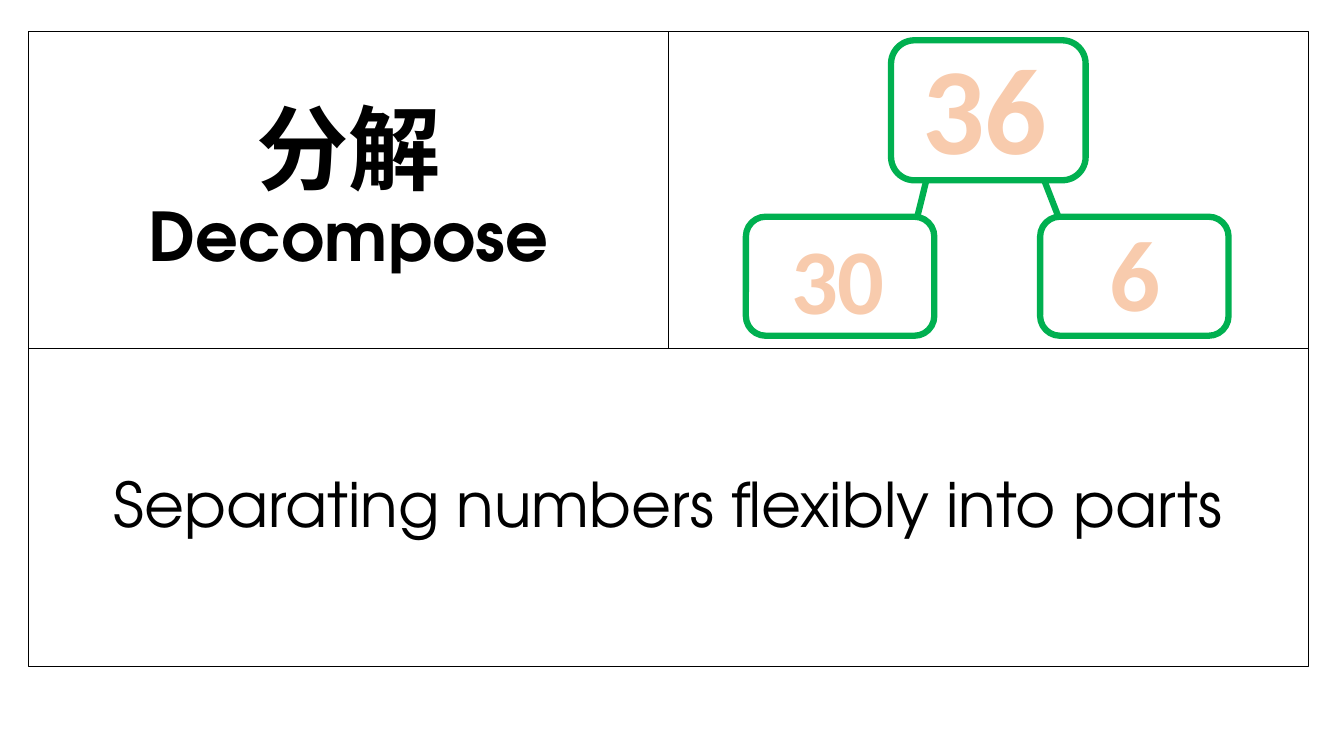
from lxml import etree
from pptx import Presentation
from pptx.dml.color import RGBColor
from pptx.enum import shapes, text
from pptx.oxml import ns
from pptx.util import Pt

BLACK = RGBColor(0x00, 0x00, 0x00)
WHITE = RGBColor(0xFF, 0xFF, 0xFF)
GREEN = RGBColor(0x00, 0xB0, 0x50)
PEACH = RGBColor(0xF8, 0xCB, 0xAD)
ORANGE = RGBColor(0xED, 0x7D, 0x31)

HEADING_FONT = "Roboto"
BODY_FONT = "TeX Gyre Adventor"
NUMBER_FONT = "Calibri"


def points(*lengths):
    return [Pt(length) for length in lengths]


class Card:
    """Style and slide of one vocabulary card."""

    def __init__(self, slide):
        self.slide = slide

    def style_font(self, font, name, size, color=BLACK, bold=False):
        font.name, font.size, font.bold = name, Pt(size), bold
        font.color.rgb = color

    def style_line(self, shape, color, width):
        shape.line.color.rgb = color
        shape.line.width = Pt(width)

    def box(self, kind, place, color, width, fill=None):
        box = self.slide.shapes.add_shape(kind, *points(*place))
        box.shadow.inherit = False
        self.style_line(box, color, width)
        if fill is None:
            box.fill.background()
        else:
            box.fill.solid()
            box.fill.fore_color.rgb = fill
        return box

    def panel(self, place):
        return self.box(shapes.MSO_SHAPE.RECTANGLE, place, BLACK, 0.75)

    def title(self, place, term, translation):
        title = self.slide.shapes.title
        title.left, title.top, title.width, title.height = points(*place)
        self.style_line(title, BLACK, 0.75)
        frame = title.text_frame
        frame.auto_size = text.MSO_AUTO_SIZE.NONE
        frame.vertical_anchor = text.MSO_ANCHOR.MIDDLE
        heading = frame.paragraphs[0]
        heading.alignment = text.PP_ALIGN.CENTER
        heading.line_spacing = 0.9
        term_run = heading.add_run()
        term_run.text = term
        self.style_font(term_run.font, HEADING_FONT, 66, bold=True)
        heading.add_line_break()
        translation_run = heading.add_run()
        translation_run.text = translation
        self.style_font(translation_run.font, BODY_FONT, 48, bold=True)

    def definition(self, place, meaning):
        frame = self.panel(place).text_frame
        frame.word_wrap = True
        frame.vertical_anchor = text.MSO_ANCHOR.MIDDLE
        sentence = frame.paragraphs[0]
        sentence.text = meaning
        sentence.alignment = text.PP_ALIGN.LEFT
        sentence.line_spacing = 0.9
        sentence._p.get_or_add_pPr().set("marL", str(Pt(54)))
        self.style_font(sentence.font, BODY_FONT, 44)

    def number_box(self, place, fill=None):
        self.box(shapes.MSO_SHAPE.ROUNDED_RECTANGLE, place, GREEN, 4.5, fill)

    def branch(self, start, end):
        branch = self.slide.shapes.add_connector(
            shapes.MSO_CONNECTOR.STRAIGHT, *points(*start, *end))
        self.style_line(branch, GREEN, 4.5)
        etree.SubElement(branch._element.spPr, ns.qn("a:effectLst"))

    def number(self, place, value, size):
        frame = self.slide.shapes.add_textbox(*points(*place)).text_frame
        frame.word_wrap = True
        frame.auto_size = text.MSO_AUTO_SIZE.SHAPE_TO_FIT_TEXT
        digits = frame.paragraphs[0]
        digits.text = value
        self.style_font(digits.font, NUMBER_FONT, size, PEACH, bold=True)
        # Outline around the digits
        outline = etree.Element(ns.qn("a:ln"), w=str(Pt(1.75)))
        fill = etree.SubElement(outline, ns.qn("a:solidFill"))
        etree.SubElement(fill, ns.qn("a:srgbClr"), val=str(ORANGE))
        digits._p.pPr.find(ns.qn("a:defRPr")).insert(0, outline)


def main():
    deck = Presentation()
    deck.slide_width, deck.slide_height = points(960, 540)
    card = Card(deck.slides.add_slide(deck.slide_layouts[5]))

    # Three panels: term, example, definition
    left, top, width, height = 20.2, 22.3, 457.4, 226.8
    card.title((left, top, width, height), "分解", "Decompose")
    card.definition((left, top + height, 2 * width, height),
                    "Separating numbers flexibly into parts")
    card.panel((left + width, top, width, height))

    # Number bond: whole, parts and branches
    whole_bottom, part_top = 128.8, 154.8
    card.number_box((636.5, 28.8, 139, 100))
    for part_left in (532.8, 743):
        card.number_box((part_left, part_top, 134.6, 85), WHITE)
    for start_x, end_x in ((661.7, 655.2), (745.9, 756)):
        card.branch((start_x, whole_bottom), (end_x, part_top))

    # Digits
    card.number((651.6, 18.7, 111.6, 113.8), "36", 88)
    card.number((558, 154.8, 94.3, 87.1), "30", 66)
    card.number((785.5, 146.9, 97.2, 94.3), "6", 72)

    deck.save("out.pptx")


if __name__ == "__main__":
    main()
